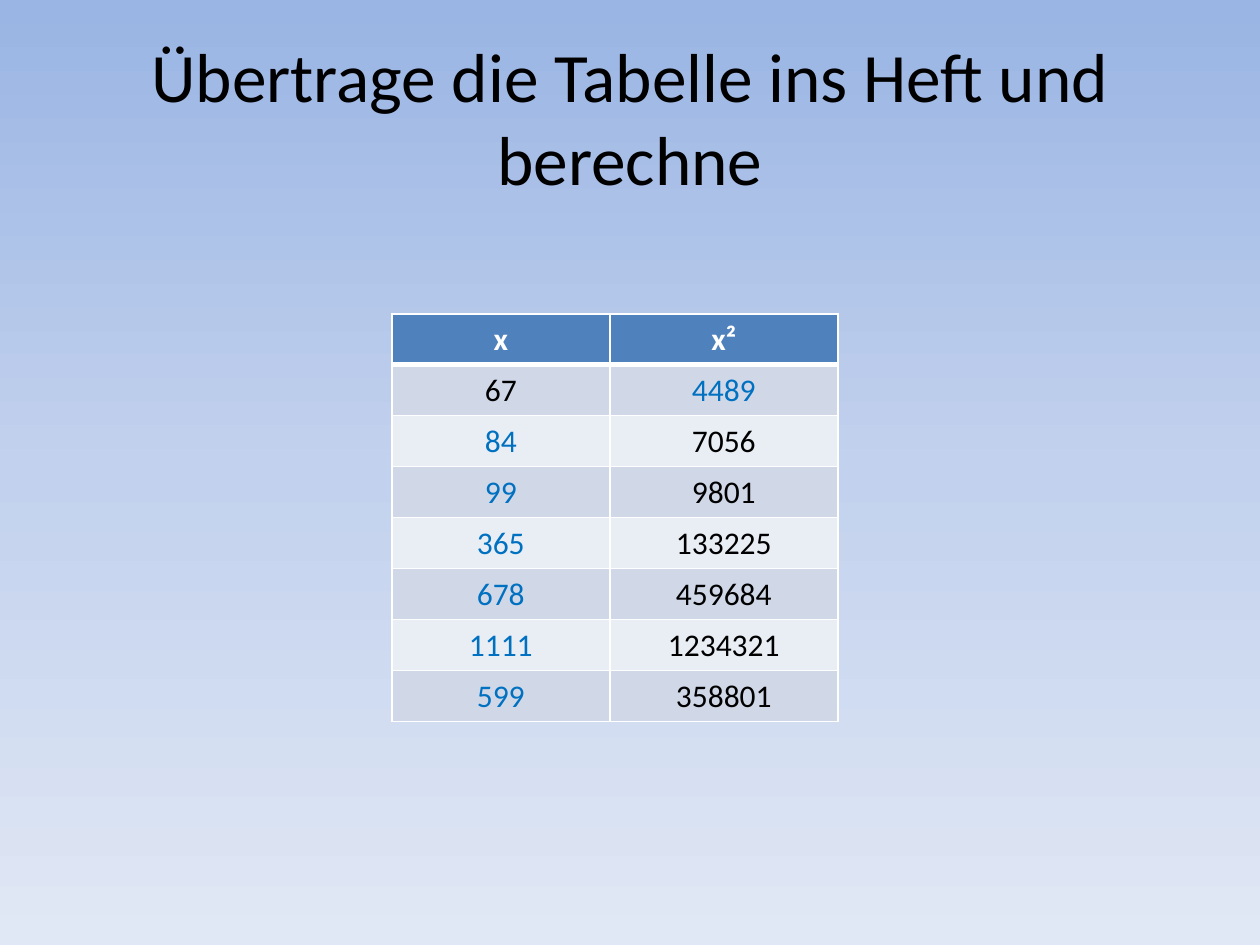
from copy import deepcopy

from lxml import etree
from pptx import Presentation
from pptx.dml.color import RGBColor
from pptx.enum import text
from pptx.oxml.ns import qn
from pptx.util import Inches, Pt

FONT = "Calibri"
BLACK, WHITE, BLUE = "000000", "FFFFFF", "0070C0"
HEADER_FILL, BAND_FILLS = "4F81BD", ("D0D8E8", "E9EDF4")
BACKGROUND_STOPS = ((0, "9AB5E4"), (0.5, "C2D1ED"), (1, "E1E8F5"))
NUMBERS = (67, 84, 99, 365, 678, 1111, 599)
COLUMN_WIDTHS = (1.73, 1.81)


def color(value):
    """Return the colour for a hex string."""
    return RGBColor.from_string(value)


def paint_background(page):
    """Fill the page with a vertical gradient of three colours."""
    fill = page.background.fill
    fill.gradient()
    fill.gradient_angle = 270
    stop_list = page.element.find(".//" + qn("a:gsLst"))
    stop_list.insert(1, deepcopy(stop_list[0]))
    for stop, (position, value) in zip(fill.gradient_stops, BACKGROUND_STOPS):
        stop.position = position
        stop.color.rgb = color(value)


def write(frame, words, size, value, bold=False):
    """Put one centred, formatted paragraph into a text frame."""
    frame.text = words
    para = frame.paragraphs[0]
    para.alignment = text.PP_ALIGN.CENTER
    font = para.runs[0].font
    font.name, font.size, font.bold = FONT, Pt(size), bold
    font.color.rgb = color(value)


def add_title(page, words):
    """Add the wrapped heading, centred in its box."""
    box = page.shapes.add_textbox(Inches(0.5), Inches(0.3), Inches(9), Inches(1.25))
    frame = box.text_frame
    frame.word_wrap = True
    frame.vertical_anchor = text.MSO_ANCHOR.MIDDLE
    write(frame, words, 39.6, BLACK)


def add_borders(cell, top, bottom):
    """Draw white cell borders, with top and bottom widths in points."""
    properties = cell._tc.get_or_add_tcPr()
    for side, width in (("L", 1), ("R", 1), ("T", top), ("B", bottom)):
        line = etree.SubElement(properties, qn(f"a:ln{side}"), w=str(Pt(width)))
        fill = etree.SubElement(line, qn("a:solidFill"))
        etree.SubElement(fill, qn("a:srgbClr"), val=WHITE)


def fill_cell(cell, words, value, fill, bold=False, top=1, bottom=1):
    """Give a cell its text, borders and fill."""
    write(cell.text_frame, words, 18, value, bold)
    add_borders(cell, top, bottom)
    cell.fill.solid()
    cell.fill.fore_color.rgb = color(fill)


def add_square_table(page):
    """Add the table of numbers and squares, with the solutions in blue."""
    frame = page.shapes.add_table(
        len(NUMBERS) + 1, 2, Inches(3.11), Inches(2.49),
        Inches(sum(COLUMN_WIDTHS)), Inches(3.24))
    table = frame.table
    table.first_row = table.horz_banding = False
    for column, width in zip(table.columns, COLUMN_WIDTHS):
        column.width = Inches(width)
    for column, heading in enumerate(("x", "x²")):
        fill_cell(table.cell(0, column), heading, WHITE, HEADER_FILL, True, bottom=3)
    for row, number in enumerate(NUMBERS, 1):
        colors = (BLACK, BLUE) if row == 1 else (BLUE, BLACK)
        for column, value in enumerate((number, number ** 2)):
            fill_cell(table.cell(row, column), str(value), colors[column],
                      BAND_FILLS[(row - 1) % 2], top=3 if row == 1 else 1)


def main():
    """Build and save the deck."""
    deck = Presentation()
    deck.slide_width, deck.slide_height = Inches(10), Inches(7.5)
    page = deck.slides.add_slide(deck.slide_layouts[6])
    paint_background(page)
    add_title(page, "Übertrage die Tabelle ins Heft und berechne")
    add_square_table(page)
    deck.save("out.pptx")


if __name__ == "__main__":
    main()
